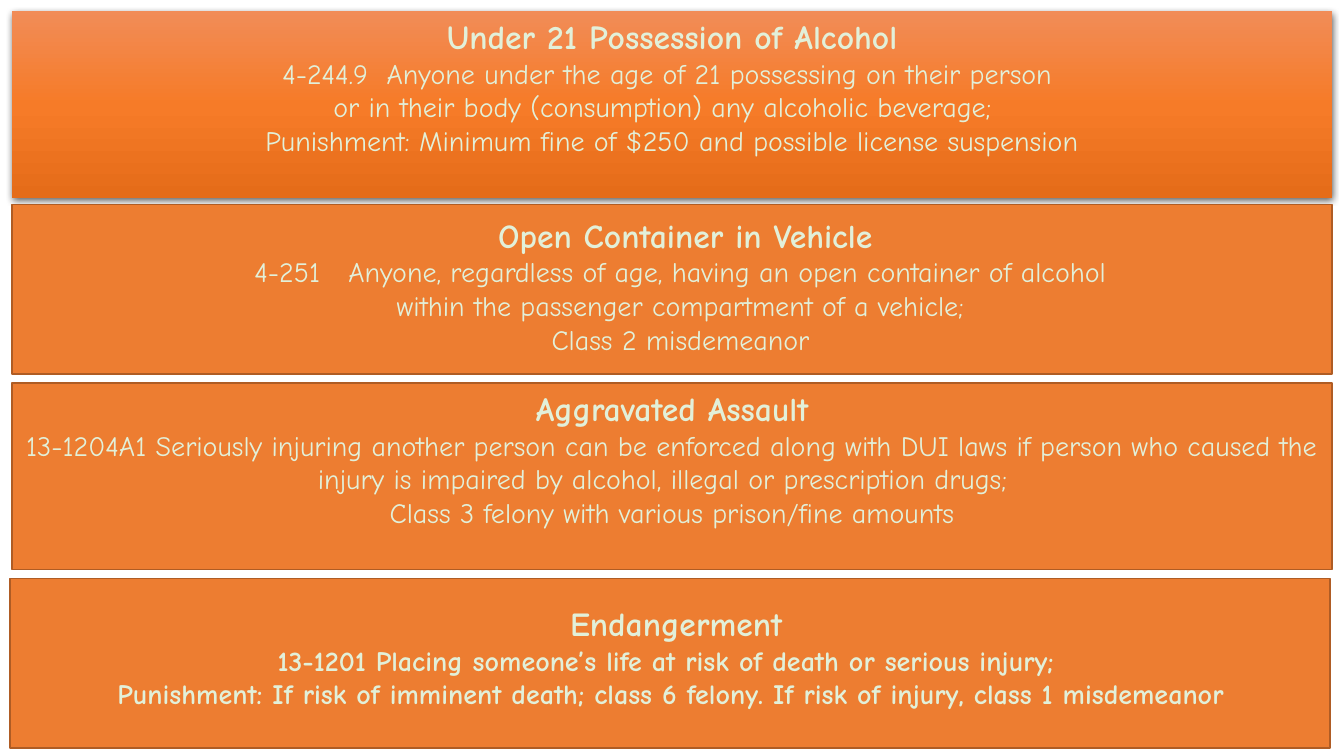
from dataclasses import dataclass
from typing import Optional

from pptx import Presentation
from pptx.dml.color import RGBColor
from pptx.enum.shapes import MSO_SHAPE
from pptx.enum.text import MSO_ANCHOR, PP_ALIGN
from pptx.oxml import parse_xml
from pptx.oxml.ns import nsdecls, qn
from pptx.util import Inches, Pt

SLIDE_WIDTH = Inches(13.33)
SLIDE_HEIGHT = Inches(7.5)
FONT = "Comic Neue"
TITLE_SIZE = Pt(24)
BODY_SIZE = Pt(20)
ORANGE = RGBColor(0xED, 0x7D, 0x31)
BROWN = RGBColor(0xAF, 0x5C, 0x24)
PALE_GREEN = RGBColor(0xE2, 0xF0, 0xD9)
BLACK = RGBColor(0x00, 0x00, 0x00)
GRADIENT = (
    (0, RGBColor(0xF1, 0x8C, 0x57)),
    (50, RGBColor(0xF6, 0x7B, 0x28)),
    (100, RGBColor(0xE5, 0x6C, 0x19)),
)


@dataclass(frozen=True)
class Area:
    """A rectangle in percent of the slide's width and height."""
    left: float
    top: float
    width: float
    height: float

    def lengths(self) -> tuple[int, int, int, int]:
        return (
            int(SLIDE_WIDTH * self.left / 100),
            int(SLIDE_HEIGHT * self.top / 100),
            int(SLIDE_WIDTH * self.width / 100),
            int(SLIDE_HEIGHT * self.height / 100),
        )


@dataclass(frozen=True)
class Law:
    """One offence; its text sits in the panel unless text_area is given."""
    title: str
    body: tuple[str, ...]
    panel: Area
    text_area: Optional[Area] = None
    raised: bool = False
    bold_body: bool = False


LAWS = (
    Law(
        "Under 21 Possession of Alcohol",
        (
            "4-244.9  Anyone under the age of 21 possessing on their person ",
            "or in their body (consumption) any alcoholic beverage;  ",
            "Punishment: Minimum fine of $250 and possible license suspension",
        ),
        Area(0.9, 1.47, 98.2, 24.67),
        raised=True,
    ),
    Law(
        "Open Container in Vehicle",
        (
            "4-251   Anyone, regardless of age, having an open container of alcohol ",
            "within the passenger compartment of a vehicle; ",
            "Class 2 misdemeanor ",
        ),
        Area(0.9, 27.07, 98.2, 22.4),
        text_area=Area(1.88, 27.73, 98.2, 24.67),
    ),
    Law(
        "Aggravated Assault",
        (
            "13-1204A1 Seriously injuring another person can be enforced along with "
            "DUI laws if person who caused the injury is impaired by alcohol, "
            "illegal or prescription drugs;  ",
            "Class 3 felony with various prison/fine amounts",
        ),
        Area(0.9, 50.67, 98.2, 24.67),
    ),
    Law(
        "Endangerment",
        (
            "13-1201 Placing someone’s life at risk of death or serious injury;  ",
            "Punishment: If risk of imminent death; class 6 felony. "
            "If risk of injury, class 1 misdemeanor ",
        ),
        Area(0.75, 76.53, 98.2, 22.4),
        text_area=Area(1.35, 79.07, 97.9, 21.07),
        bold_body=True,
    ),
)


def raise_panel(shape) -> None:
    """Give the panel a top-down gradient and a soft shadow, without outline."""
    stops = "".join(
        f'<a:gs pos="{percent * 1000}"><a:srgbClr val="{color}"/></a:gs>'
        for percent, color in GRADIENT
    )
    properties = shape._element.spPr
    properties.find(qn("a:prstGeom")).addnext(parse_xml(
        f'<a:gradFill {nsdecls("a")} rotWithShape="1"><a:gsLst>{stops}</a:gsLst>'
        '<a:lin ang="5400000" scaled="0"/></a:gradFill>'
    ))
    properties.find(qn("a:effectLst")).append(parse_xml(
        f'<a:outerShdw {nsdecls("a")} blurRad="{Pt(4.5)}" dist="{Pt(1.5)}" '
        'dir="5400000" algn="ctr" rotWithShape="0">'
        f'<a:srgbClr val="{BLACK}"><a:alpha val="63000"/></a:srgbClr></a:outerShdw>'
    ))
    shape.line.fill.background()


def add_panel(slide, law: Law):
    shape = slide.shapes.add_shape(MSO_SHAPE.RECTANGLE, *law.panel.lengths())
    shape.shadow.inherit = False
    if law.raised:
        raise_panel(shape)
    else:
        shape.fill.solid()
        shape.fill.fore_color.rgb = ORANGE
        shape.line.color.rgb = BROWN
        shape.line.width = Pt(1)
    return shape


def write_law(shape, law: Law) -> None:
    text_frame = shape.text_frame
    text_frame.word_wrap = True
    text_frame.vertical_anchor = MSO_ANCHOR.TOP
    text_frame.text = "\n".join((law.title, *law.body))
    for index, paragraph in enumerate(text_frame.paragraphs):
        is_title = index == 0
        paragraph.alignment = PP_ALIGN.CENTER
        for run in paragraph.runs:
            run.font.name = FONT
            run.font.size = TITLE_SIZE if is_title else BODY_SIZE
            run.font.bold = is_title or law.bold_body
            run.font.color.rgb = PALE_GREEN


def main() -> None:
    presentation = Presentation()
    presentation.slide_width = SLIDE_WIDTH
    presentation.slide_height = SLIDE_HEIGHT
    slide = presentation.slides.add_slide(presentation.slide_layouts[6])
    for law in LAWS:
        shape = add_panel(slide, law)
        if law.text_area:
            shape = slide.shapes.add_textbox(*law.text_area.lengths())
        write_law(shape, law)
    presentation.save("out.pptx")


if __name__ == "__main__":
    main()
